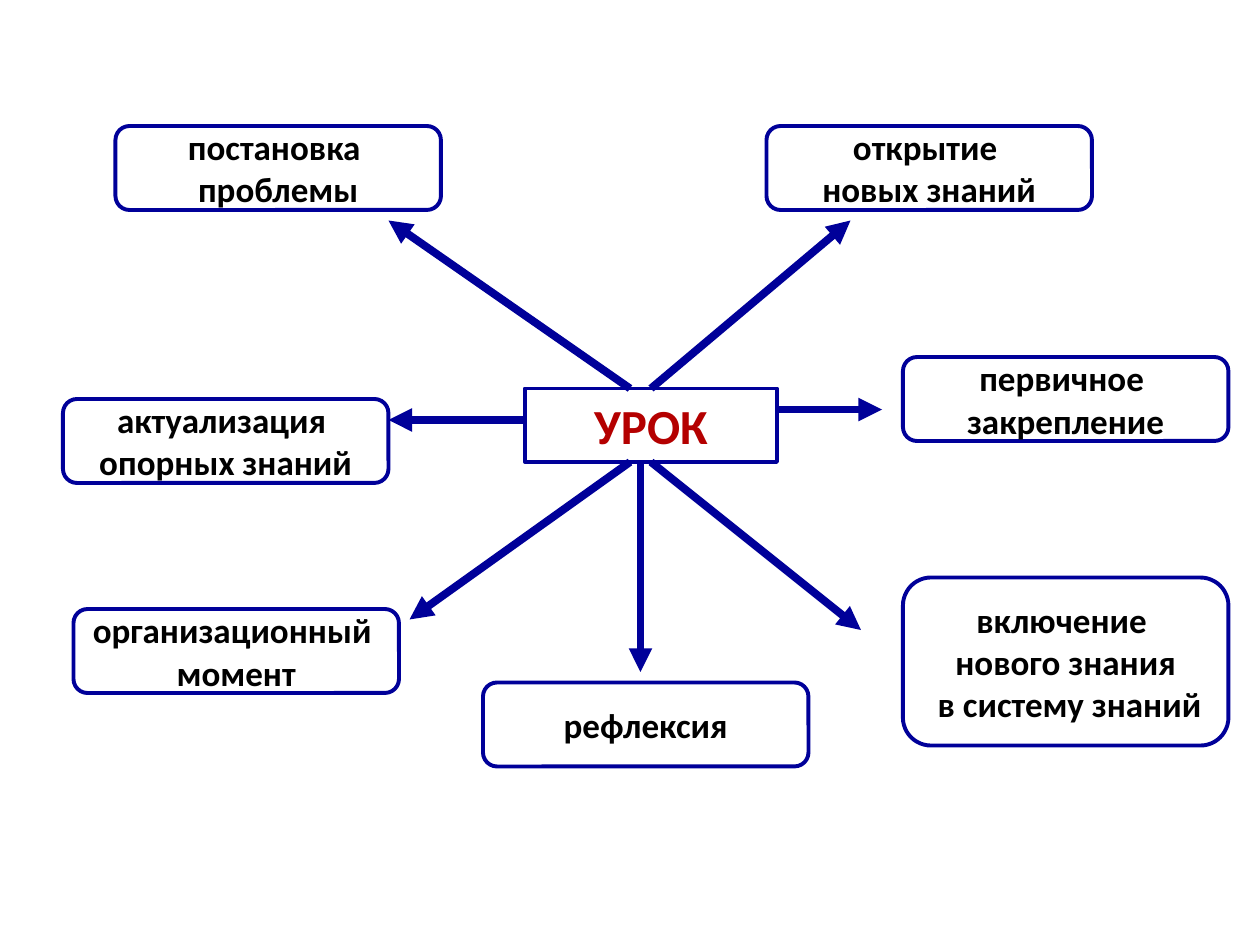
import pptx
import pptx.util
import pptx.dml.color
import pptx.enum.shapes
import pptx.enum.text
import pptx.oxml
import pptx.oxml.ns

# Content: lengths in px, 120 px to the inch
PX = 914400 // 120
FONT = "Calibri"
COLORS = {"line": "000099", "fill": "FFFFFF", "text": "000000", "lesson": "B40000"}

LESSON = ("УРОК", 500, 370, 240, 70)
STAGE_W, STAGE_H = 310, 80
STAGES = [  # lines, left, top, height
    (["включение ", "нового знания", " в систему знаний"], 860, 550, 2 * STAGE_H),
    (["постановка ", "проблемы"], 110, 120, STAGE_H),
    (["организационный ", "момент"], 70, 580, STAGE_H),
    (["актуализация ", "опорных знаний"], 60, 380, STAGE_H),
    (["рефлексия"], 460, 650, STAGE_H),
    (["открытие ", "новых знаний"], 730, 120, STAGE_H),
    (["первичное ", "закрепление"], 860, 340, STAGE_H),
]
ARROWS = [  # from, to
    ((620, 370), (810, 210)),
    ((600, 370), (370, 210)),
    ((610, 440), (610, 640)),
    ((740, 390), (840, 390)),
    ((620, 440), (820, 600)),
    ((600, 440), (390, 590)),
    ((500, 400), (370, 400)),
]


def rgb(name):
    return pptx.dml.color.RGBColor.from_string(COLORS[name])


def px(*values):
    return [v * PX for v in values]


def add_box(s, kind, box, lines, size, color):
    sp = s.shapes.add_shape(kind, *px(*box))
    sp.shadow.inherit = False
    sp.fill.solid()
    sp.fill.fore_color.rgb = rgb("fill")
    sp.line.color.rgb = rgb("line")
    sp.line.width = pptx.util.Pt(2.25)
    tf = sp.text_frame
    tf.word_wrap = False
    tf.vertical_anchor = pptx.enum.text.MSO_ANCHOR.MIDDLE
    for i, line in enumerate(lines):
        p = tf.add_paragraph() if i else tf.paragraphs[0]
        p.alignment = pptx.enum.text.PP_ALIGN.CENTER
        r = p.add_run()
        r.text = line
        r.font.name = FONT
        r.font.size = pptx.util.Pt(size)
        r.font.bold = True
        r.font.color.rgb = rgb(color)


def add_arrow(s, start, end):
    line = s.shapes.add_connector(
        pptx.enum.shapes.MSO_CONNECTOR.STRAIGHT, *px(*start, *end))
    line.line.color.rgb = rgb("line")
    line.line.width = pptx.util.Pt(4.5)
    ln = line.line._get_or_add_ln()
    tail = pptx.oxml.parse_xml(
        f'<a:tailEnd {pptx.oxml.ns.nsdecls("a")} type="triangle"/>')
    ln.append(tail)
    ln.addnext(pptx.oxml.parse_xml(f'<a:effectLst {pptx.oxml.ns.nsdecls("a")}/>'))


def main():
    prs = pptx.Presentation()
    prs.slide_width, prs.slide_height = px(1200, 900)
    s = prs.slides.add_slide(prs.slide_layouts[6])
    shapes = pptx.enum.shapes.MSO_SHAPE

    # Lesson in the centre
    title, *box = LESSON
    add_box(s, shapes.RECTANGLE, box, [title], 28, "lesson")

    # Stages around it
    for lines, left, top, height in STAGES:
        add_box(s, shapes.ROUNDED_RECTANGLE, (left, top, STAGE_W, height),
                lines, 20, "text")

    # Arrows from the lesson to each stage
    for start, end in ARROWS:
        add_arrow(s, start, end)

    prs.save("out.pptx")


if __name__ == "__main__":
    main()
